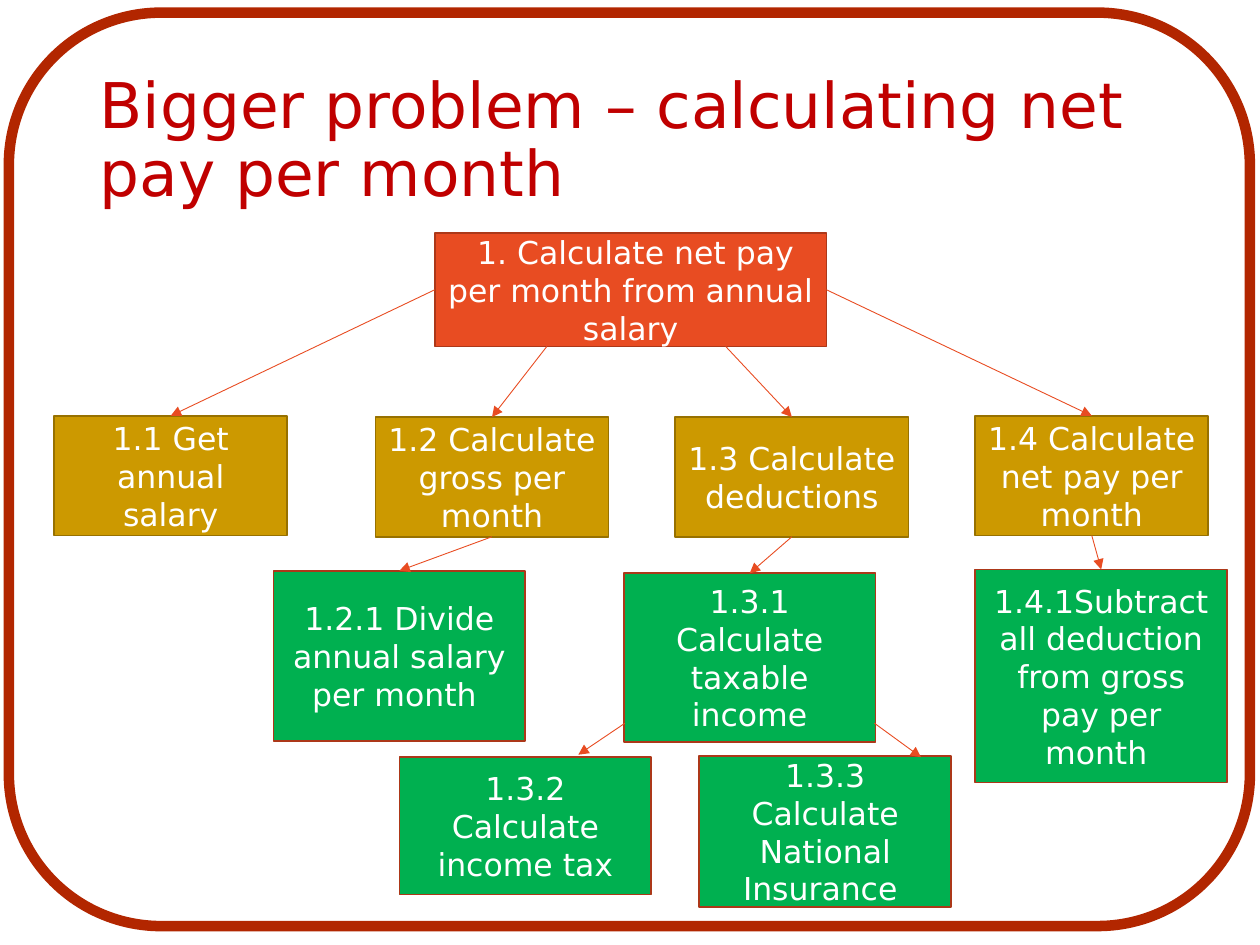
"""Build the structure diagram that breaks net monthly pay into smaller steps."""
from lxml.etree import SubElement
from pptx import Presentation
from pptx.dml.color import RGBColor
from pptx.enum.shapes import MSO_CONNECTOR, MSO_SHAPE
from pptx.enum.text import MSO_ANCHOR, MSO_AUTO_SIZE, PP_ALIGN
from pptx.oxml.ns import qn
from pptx.util import Inches, Pt

COLUMNS, ROWS = 100, 75
TOP, LEFT, BOTTOM, RIGHT = range(4)


def colour(hex_string):
    return RGBColor.from_string(hex_string)


def write(frame, text, size=18, ink="FFFFFF", align=PP_ALIGN.CENTER, spacing=None):
    frame.text = text
    frame.word_wrap = True
    frame.auto_size = MSO_AUTO_SIZE.NONE
    frame.vertical_anchor = MSO_ANCHOR.MIDDLE
    for paragraph in frame.paragraphs:
        paragraph.alignment = align
        paragraph.line_spacing = spacing
        paragraph.font.name = "DejaVu Sans"
        paragraph.font.size = Pt(size)
        paragraph.font.color.rgb = colour(ink)


class Diagram:
    root_style = ("E84C22", "AC3819")
    task_style = ("CC9900", "977100")
    step_style = ("00B050", "AC3819")
    arrow_colour = "E84C22"

    def __init__(self, deck):
        self.slide = deck.slides.add_slide(deck.slide_layouts[5])
        self.column = deck.slide_width / COLUMNS
        self.row = deck.slide_height / ROWS

    def place(self, *cells):
        steps = (self.column, self.row) * 2
        return [round(cell * step) for cell, step in zip(cells, steps)]

    def title(self, text, *cells):
        heading = self.slide.shapes.title
        heading.left, heading.top, heading.width, heading.height = self.place(*cells)
        write(heading.text_frame, text, size=36, ink="C00000", align=PP_ALIGN.LEFT, spacing=0.9)

    def outline(self, preset, cells, line, weight):
        shape = self.slide.shapes.add_shape(preset, *self.place(*cells))
        shape.shadow.inherit = False
        shape.fill.background()
        shape.line.color.rgb = colour(line)
        shape.line.width = Pt(weight)
        return shape

    def frame(self, *cells):
        self.outline(MSO_SHAPE.ROUNDED_RECTANGLE, cells, "B22600", 6)

    def box(self, text, style, *cells):
        fill, line = style
        shape = self.outline(MSO_SHAPE.RECTANGLE, cells, line, 1)
        shape.fill.solid()
        shape.fill.fore_color.rgb = colour(fill)
        write(shape.text_frame, text)
        return shape

    def arrow(self, start, end):
        """Draw an arrow whose ends are each a (box, side) pair or a (column, row) point."""
        points = [(0, 0) if not isinstance(e[0], (int, float)) else e for e in (start, end)]
        link = self.slide.shapes.add_connector(
            MSO_CONNECTOR.STRAIGHT, *self.place(*points[0], *points[1]))
        for target, point, join in ((start, points[0], link.begin_connect),
                                    (end, points[1], link.end_connect)):
            if target is not point:
                join(*target)
        link.line.color.rgb = colour(self.arrow_colour)
        link.line.width = Pt(0.5)
        properties = link.line._get_or_add_ln()
        SubElement(properties, qn("a:tailEnd"), type="triangle")
        SubElement(properties.getparent(), qn("a:effectLst"))


def main():
    deck = Presentation()
    deck.slide_width, deck.slide_height = Inches(10), Inches(7.5)
    diagram = Diagram(deck)
    diagram.frame(0.7, 1, 98.5, 72.5)
    diagram.title("Bigger problem – calculating net pay per month", 6.9, 4, 86.2, 14.5)

    net_pay = diagram.box(" 1. Calculate net pay per month from annual salary",
                          diagram.root_style, 34.5, 18.5, 31.1, 9)
    salary, gross, deductions, net_month = [
        diagram.box(text, diagram.task_style, left, top, 18.5, 9.5)
        for text, left, top in (
            ("1.1 Get annual salary", 4.3, 33),
            ("1.2 Calculate gross per month", 29.8, 33.1),
            ("1.3 Calculate deductions", 53.6, 33.1),
            ("1.4 Calculate net pay per month", 77.4, 33),
        )]
    divide, taxable, _, _, subtract = [
        diagram.box(text, diagram.step_style, left, top, 20, height)
        for text, left, top, height in (
            ("1.2.1 Divide annual salary per month ", 21.7, 45.3, 13.5),
            ("1.3.1 Calculate taxable income", 49.5, 45.5, 13.4),
            ("1.3.3\nCalculate National Insurance ", 55.5, 60, 12),
            ("1.3.2 Calculate income tax", 31.7, 60.1, 10.9),
            ("1.4.1Subtract all deduction from gross pay per month ", 77.4, 45.2, 16.9),
        )]

    for start, task in (((net_pay, LEFT), salary), ((43.4, 27.5), gross),
                        ((57.6, 27.5), deductions), ((net_pay, RIGHT), net_month)):
        diagram.arrow(start, (task, TOP))
    for task, step in ((gross, divide), (deductions, taxable), (net_month, subtract)):
        diagram.arrow((task, BOTTOM), (step, TOP))
    diagram.arrow((49.6, 57.4), (45.9, 59.9))
    diagram.arrow((69.4, 57.4), (73.1, 60.1))
    deck.save("out.pptx")


if __name__ == "__main__":
    main()
